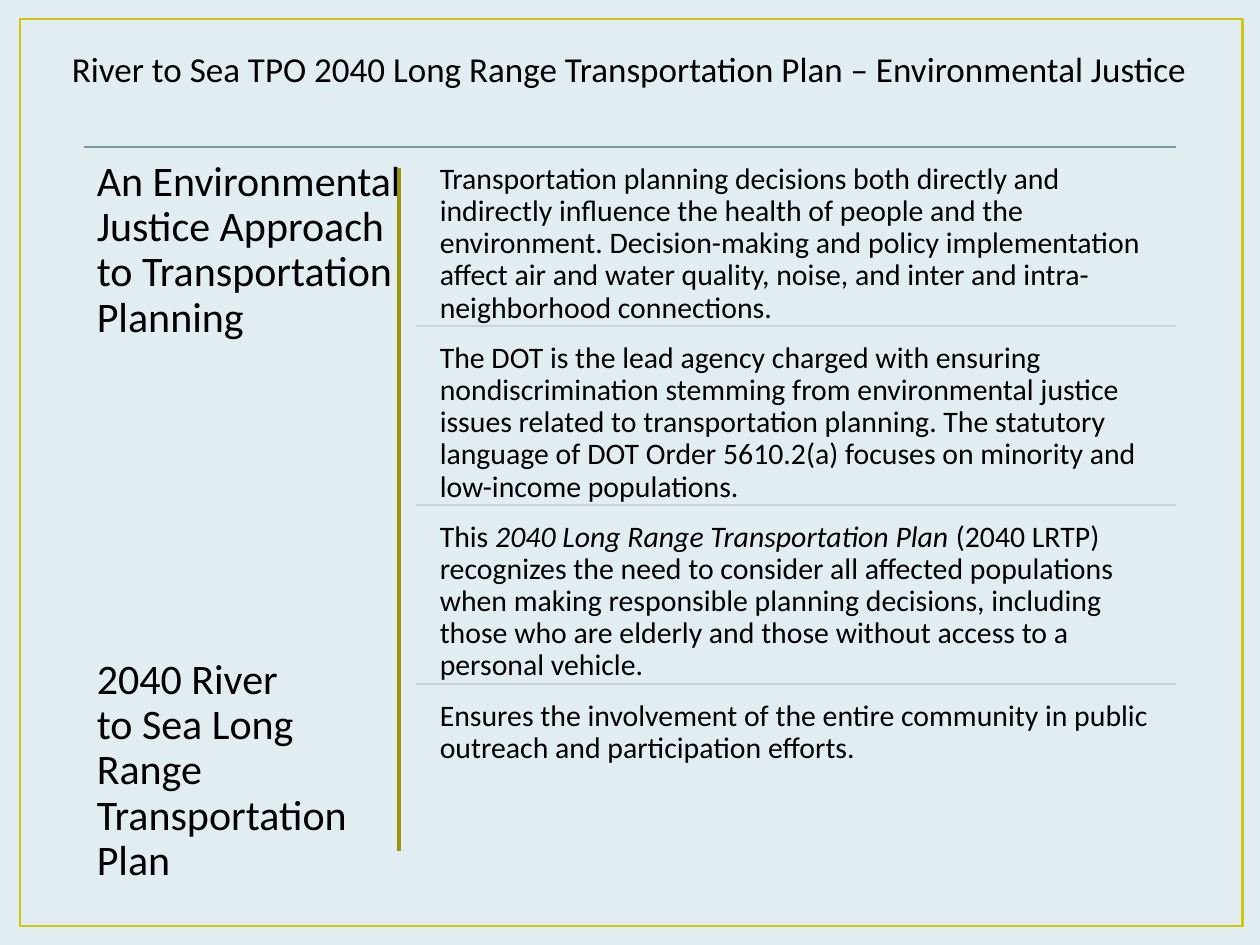
"""Build the environmental justice slide of the long range transportation plan."""
import dataclasses
from typing import Sequence

import lxml.etree
import pptx
import pptx.dml.color
import pptx.enum.shapes
import pptx.enum.text
import pptx.oxml.ns
import pptx.util

Inches = pptx.util.Inches
Pt = pptx.util.Pt
RGB = pptx.dml.color.RGBColor.from_string


@dataclasses.dataclass(frozen=True)
class Theme:
    font: str = "Calibri"
    background: str = "E2EDF2"
    text: str = "000000"
    border: str = "CFC60D"
    rule: str = "759AA5"
    separator: str = "CAD4D8"
    divider: str = "9B950A"
    title_size: float = 20
    heading_size: float = 24
    body_size: float = 17


@dataclasses.dataclass(frozen=True)
class Box:
    left: float
    top: float
    width: float
    height: float
    inset: float


@dataclasses.dataclass(frozen=True)
class Heading:
    top: float
    height: float
    paragraphs: tuple[str, ...]


@dataclasses.dataclass(frozen=True)
class Run:
    text: str
    italic: bool = False


THEME = Theme()
TITLE = "River to Sea TPO 2040 Long Range Transportation Plan – Environmental Justice"
HEADINGS = (
    Heading(1.17, 1.8, ("An Environmental Justice Approach to Transportation Planning",)),
    Heading(5.12, 1.95, ("2040 River", "to Sea Long Range Transportation Plan")),
)
POINTS = (
    (Run("Transportation planning decisions both directly and indirectly influence the health "
         "of people and the environment. Decision-making and policy implementation affect air "
         "and water quality, noise, and inter and intra-neighborhood connections."),),
    (Run("The DOT is the lead agency charged with ensuring nondiscrimination stemming from "
         "environmental justice issues related to transportation planning. The statutory "
         "language of DOT Order 5610.2(a) focuses on minority and low-income populations."),),
    (Run("This "),
     Run("2040 Long Range Transportation Plan", italic=True),
     Run(" (2040 LRTP) recognizes the need to consider all affected populations when making "
         "responsible planning decisions, including those who are elderly and those without "
         "access to a personal vehicle.")),
    (Run("Ensures the involvement of the entire community in public outreach and "
         "participation efforts."),),
)
LEFT, RIGHT = 0.67, 9.33
POINT_LEFT, POINT_TOP, POINT_HEIGHT, POINT_PITCH = 3.42, 1.23, 1.35, 1.42
SEPARATOR_LEFT, SEPARATOR_OFFSET = 3.3, 1.36


def style_font(font, size: float, italic: bool = False) -> None:
    """Apply the theme font at the given size."""
    font.name = THEME.font
    font.size = Pt(size)
    font.italic = italic
    font.color.rgb = RGB(THEME.text)


def add_text(s, box: Box, paragraphs: Sequence[Sequence[Run]], size: float) -> None:
    """Add a wrapped, top-anchored text box."""
    sp = s.shapes.add_textbox(*map(Inches, (box.left, box.top, box.width, box.height)))
    tf = sp.text_frame
    tf.word_wrap = True
    tf.margin_left = tf.margin_top = tf.margin_right = tf.margin_bottom = Inches(box.inset)
    for i, runs in enumerate(paragraphs):
        p = tf.paragraphs[0] if i == 0 else tf.add_paragraph()
        p.line_spacing = 0.9
        for run in runs:
            r = p.add_run()
            r.text = run.text
            style_font(r.font, size, run.italic)


def add_line(s, x1: float, y1: float, x2: float, y2: float, color: str, width: float) -> None:
    """Add a straight line without a shadow."""
    line = s.shapes.add_connector(
        pptx.enum.shapes.MSO_CONNECTOR.STRAIGHT, *map(Inches, (x1, y1, x2, y2)))
    line.line.color.rgb = RGB(color)
    line.line.width = Pt(width)
    lxml.etree.SubElement(line._element.spPr, pptx.oxml.ns.qn("a:effectLst"))


def add_border(s) -> None:
    """Frame the slide with an unfilled rectangle."""
    sp = s.shapes.add_shape(
        pptx.enum.shapes.MSO_SHAPE.RECTANGLE, *map(Inches, (0.16, 0.15, 9.7, 7.2)))
    sp.shadow.inherit = False
    sp.fill.background()
    sp.line.color.rgb = RGB(THEME.border)
    sp.line.width = Pt(1.5)


def set_title(s) -> None:
    """Place and format the title placeholder."""
    sp = s.shapes.title
    sp.left, sp.top, sp.width, sp.height = map(Inches, (0.33, 0.33, 9.33, 0.44))
    tf = sp.text_frame
    tf.text = TITLE
    tf.word_wrap = True
    tf.auto_size = pptx.enum.text.MSO_AUTO_SIZE.NONE
    tf.vertical_anchor = pptx.enum.text.MSO_ANCHOR.TOP
    p = tf.paragraphs[0]
    p.alignment = pptx.enum.text.PP_ALIGN.CENTER
    style_font(p.runs[0].font, THEME.title_size)


def main() -> None:
    """Build and save the presentation."""
    prs = pptx.Presentation()
    prs.slide_width, prs.slide_height = Inches(10), Inches(7.5)
    s = prs.slides.add_slide(prs.slide_layouts[5])
    s.background.fill.solid()
    s.background.fill.fore_color.rgb = RGB(THEME.background)

    add_border(s)
    set_title(s)
    add_line(s, LEFT, 1.17, RIGHT, 1.17, THEME.rule, 1.25)
    for heading in HEADINGS:
        add_text(s, Box(LEFT, heading.top, 2.64, heading.height, 0.1),
                 [[Run(text)] for text in heading.paragraphs], THEME.heading_size)
    for i, runs in enumerate(POINTS):
        top = POINT_TOP + i * POINT_PITCH
        add_text(s, Box(POINT_LEFT, top, RIGHT - POINT_LEFT, POINT_HEIGHT, 0.07),
                 [runs], THEME.body_size)
        if i < len(POINTS) - 1:
            y = top + SEPARATOR_OFFSET
            add_line(s, SEPARATOR_LEFT, y, RIGHT, y, THEME.separator, 1.25)
    add_line(s, 3.17, 1.33, 3.17, 6.75, THEME.divider, 2.25)
    prs.save("out.pptx")


if __name__ == "__main__":
    main()
